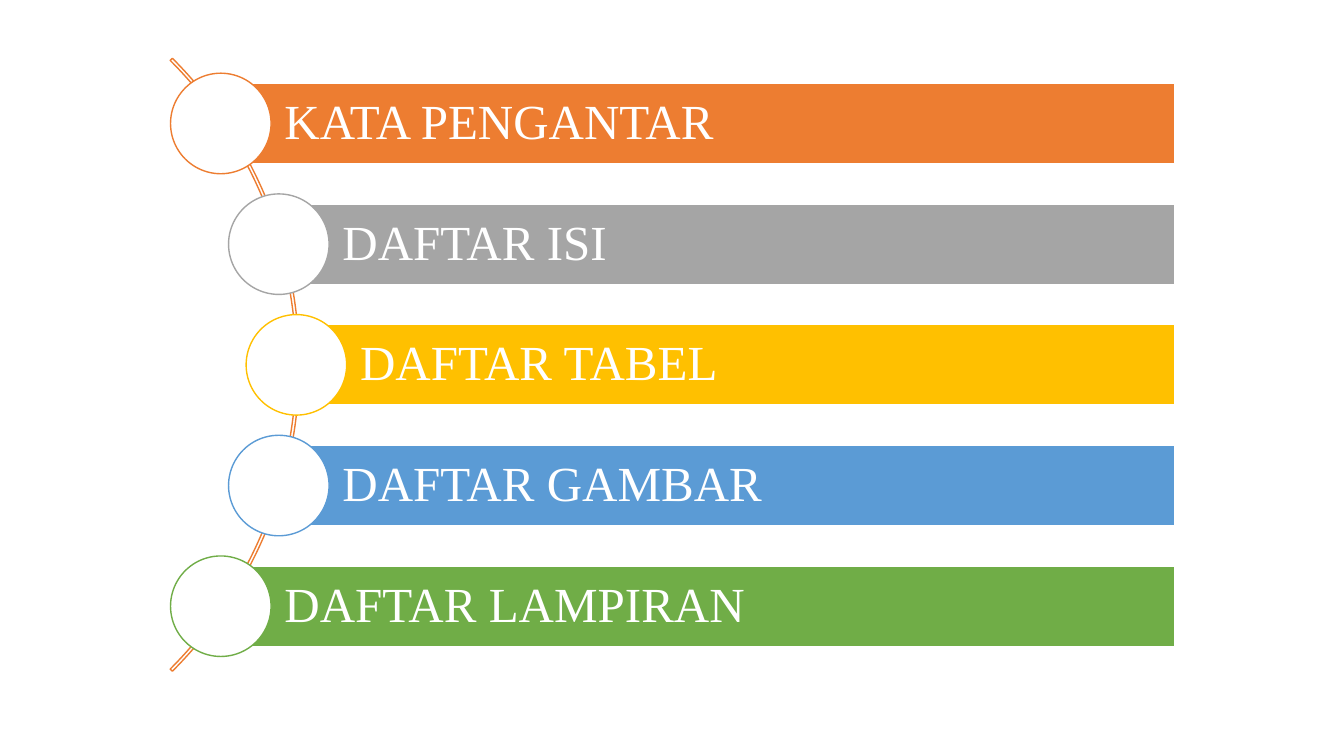
import math

import pptx
import pptx.util
from pptx.dml.color import RGBColor
from pptx.enum.shapes import MSO_SHAPE
from pptx.enum.text import MSO_ANCHOR, PP_ALIGN

Pt = pptx.util.Pt

WHITE = RGBColor(0xFF, 0xFF, 0xFF)
ORANGE = RGBColor(0xED, 0x7D, 0x31)
GRAY = RGBColor(0xA5, 0xA5, 0xA5)
GOLD = RGBColor(0xFF, 0xC0, 0x00)
BLUE = RGBColor(0x5B, 0x9B, 0xD5)
GREEN = RGBColor(0x70, 0xAD, 0x47)

SECTIONS = [
    ("KATA PENGANTAR", ORANGE),
    ("DAFTAR ISI", GRAY),
    ("DAFTAR TABEL", GOLD),
    ("DAFTAR GAMBAR", BLUE),
    ("DAFTAR LAMPIRAN", GREEN),
]

MIDDLE_Y = 260.6
STEP = 86.2
CURVE_X, CURVE_RADIUS = -90.5, 302.2  # circle centres lie on this curve
CIRCLE = 71.8
BAR_HEIGHT = 57.4
BAR_RIGHT = 838.8
ARC_LEFT, ARC_SIZE = -405.4, 619.2


def add_outlined(kind, left, top, width, height, fill, line):
    shape = slide.shapes.add_shape(kind, Pt(left), Pt(top), Pt(width), Pt(height))
    shape.shadow.inherit = False
    if fill is None:
        shape.fill.background()
    else:
        shape.fill.solid()
        shape.fill.fore_color.rgb = fill
    shape.line.color.rgb = line
    shape.line.width = Pt(1)
    return shape


def write_title(bar, title):
    frame = bar.text_frame
    frame.word_wrap = True
    frame.vertical_anchor = MSO_ANCHOR.MIDDLE
    frame.margin_left = Pt(45.5)
    frame.margin_top = frame.margin_right = frame.margin_bottom = Pt(7)
    paragraph = frame.paragraphs[0]
    paragraph.alignment = PP_ALIGN.LEFT
    paragraph.line_spacing = 0.9
    run = paragraph.add_run()
    run.text = title
    run.font.name = "Times New Roman"
    run.font.size = Pt(35)
    run.font.color.rgb = WHITE


deck = pptx.Presentation()
deck.slide_width, deck.slide_height = Pt(960), Pt(540)
slide = deck.slides.add_slide(deck.slide_layouts[6])

arc = add_outlined(MSO_SHAPE.BLOCK_ARC, ARC_LEFT, MIDDLE_Y - ARC_SIZE / 2,
                   ARC_SIZE, ARC_SIZE, None, ORANGE)
# start angle, end angle (in 100000ths of the file's unit), thickness
for index, value in enumerate((189, 27, 0.0035)):
    arc.adjustments[index] = value

for index, (title, color) in enumerate(SECTIONS):
    offset = (index - len(SECTIONS) // 2) * STEP
    x = CURVE_X + math.sqrt(CURVE_RADIUS ** 2 - offset ** 2)
    y = MIDDLE_Y + offset
    bar = add_outlined(MSO_SHAPE.RECTANGLE, x, y - BAR_HEIGHT / 2,
                       BAR_RIGHT - x, BAR_HEIGHT, color, WHITE)
    write_title(bar, title)
    add_outlined(MSO_SHAPE.OVAL, x - CIRCLE / 2, y - CIRCLE / 2,
                 CIRCLE, CIRCLE, WHITE, color)

deck.save("out.pptx")
